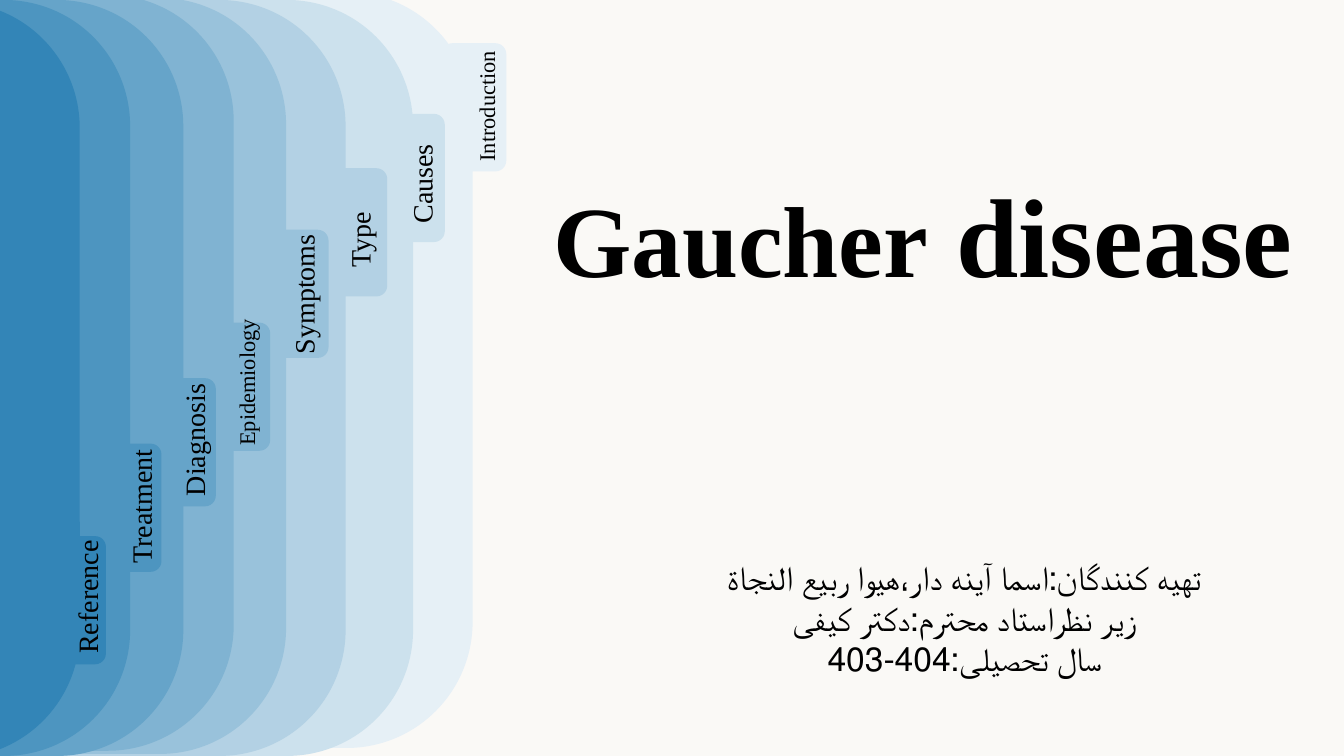
"""Build the Gaucher disease title slide with its stack of blue index tabs."""
from typing import NamedTuple

from pptx import Presentation
from pptx.dml.color import RGBColor
from pptx.enum.shapes import MSO_SHAPE
from pptx.enum.text import MSO_AUTO_SIZE, PP_ALIGN
from pptx.util import Cm, Pt

RECTANGLE = MSO_SHAPE.RECTANGLE
ROUNDED = MSO_SHAPE.ROUNDED_RECTANGLE
FIT_SHAPE = MSO_AUTO_SIZE.SHAPE_TO_FIT_TEXT
CENTER = PP_ALIGN.CENTER
LEFT = PP_ALIGN.LEFT

SLIDE_WIDTH, SLIDE_HEIGHT = 33.87, 19.05
TAB_WIDTH, TAB_HEIGHT = 1.63, 3.23
LABEL_HEIGHTS = {16: 0.94, 20: 1.12}
SERIF, SANS = "Times New Roman", "Calibri"
COLORS = {
    "paper": "FAF9F6",
    "text": "000000",
    "Introduction": "E6F0F6",
    "Causes": "CCE1ED",
    "Type": "B3D1E4",
    "Symptoms": "99C2DB",
    "Epidemiology": "80B3D2",
    "Diagnosis": "66A4C9",
    "Treatment": "4D95C0",
    "Reference": "3385B7",
}


class Box(NamedTuple):
    left: float
    top: float
    width: float
    height: float

    def lengths(self) -> tuple:
        return tuple(Cm(value) for value in self)


class TextRun(NamedTuple):
    text: str
    size: int
    font: str
    bold: bool = False


class Section(NamedTuple):
    name: str
    panel_right: float
    panel_top: float
    tab_left: float
    tab_top: float
    label_x: float
    label_y: float
    label_width: float
    size: int = 20
    panel_width: float = 37.26


SECTIONS = [
    Section("Introduction", 11.91, -0.2, 11.13, 1.09, 12.26, 2.48, 3.68, size=16),
    Section("Causes", 10.41, 0, 9.58, 2.87, 10.63, 4.27, 3.23),
    Section("Type", 8.71, 0, 8.13, 4.24, 9.07, 5.87, 2.24),
    Section("Symptoms", 7.21, -0.05, 6.65, 5.79, 7.66, 7.39, 3.58),
    Section("Epidemiology", 5.89, -0.13, 5.18, 8.13, 6.21, 9.59, 3.78, size=16),
    Section("Diagnosis", 4.62, 0, 3.81, 9.53, 4.9, 10.64, 4.22),
    Section("Treatment", 3.28, 0, 2.44, 11.18, 3.56, 12.75, 3.4),
    Section("Reference", 2.01, 0.05, 1.04, 13.51, 2.2, 14.73, 3.99, panel_width=43.08),
]
TITLE = [TextRun("Gaucher", 72, SERIF, True), TextRun(" disease", 80, SERIF, True)]
CREDITS = [
    "تهیه کنندگان:اسما آینه دار،هیوا ربیع النجاة",
    "زیر نظراستاد محترم:دکتر کیفی",
    "سال تحصیلی:404-403",
]


def add_block(shapes, preset: MSO_SHAPE, box: Box, color: str) -> None:
    shape = shapes.add_shape(preset, *box.lengths())
    shape.shadow.inherit = False
    shape.fill.solid()
    shape.fill.fore_color.rgb = RGBColor.from_string(COLORS[color])
    shape.line.fill.background()


def add_text(shapes, box: Box, paragraphs: list[list[TextRun]],
             alignment: PP_ALIGN, rotation: int = 0, right_to_left: bool = False) -> None:
    shape = shapes.add_textbox(*box.lengths())
    shape.rotation = rotation
    frame = shape.text_frame
    frame.word_wrap = True
    frame.auto_size = FIT_SHAPE
    for index, text_runs in enumerate(paragraphs):
        paragraph = frame.add_paragraph() if index else frame.paragraphs[0]
        paragraph.alignment = alignment
        if right_to_left:
            paragraph._p.get_or_add_pPr().set("rtl", "1")
        for text_run in text_runs:
            run = paragraph.add_run()
            run.text = text_run.text
            run.font.size = Pt(text_run.size)
            run.font.name = text_run.font
            run.font.bold = text_run.bold
            run.font.color.rgb = RGBColor.from_string(COLORS["text"])


def add_section(shapes, section: Section) -> None:
    panel = Box(section.panel_right - section.panel_width, section.panel_top,
                section.panel_width, SLIDE_HEIGHT)
    tab = Box(section.tab_left, section.tab_top, TAB_WIDTH, TAB_HEIGHT)
    group = shapes.add_group_shape()
    for box in (panel, tab):
        add_block(group.shapes, ROUNDED, box, section.name)
    height = LABEL_HEIGHTS[section.size]
    label = Box(section.label_x - section.label_width / 2,
                section.label_y - height / 2, section.label_width, height)
    add_text(shapes, label, [[TextRun(section.name, section.size, SERIF)]],
             LEFT, rotation=270)


def main() -> None:
    presentation = Presentation()
    presentation.slide_width = Cm(SLIDE_WIDTH)
    presentation.slide_height = Cm(SLIDE_HEIGHT)
    slide = presentation.slides.add_slide(presentation.slide_layouts[6])
    shapes = slide.shapes
    add_block(shapes, RECTANGLE, Box(0.25, 0, 33.62, SLIDE_HEIGHT), "paper")
    for section in SECTIONS:
        add_section(shapes, section)
    add_text(shapes, Box(13.23, 4.04, 20.07, 3.68), [TITLE], CENTER)
    add_text(shapes, Box(16.13, 13.92, 16.36, 3.33),
             [[TextRun(line, 24, SANS)] for line in CREDITS], CENTER, right_to_left=True)
    presentation.save("out.pptx")


if __name__ == "__main__":
    main()
